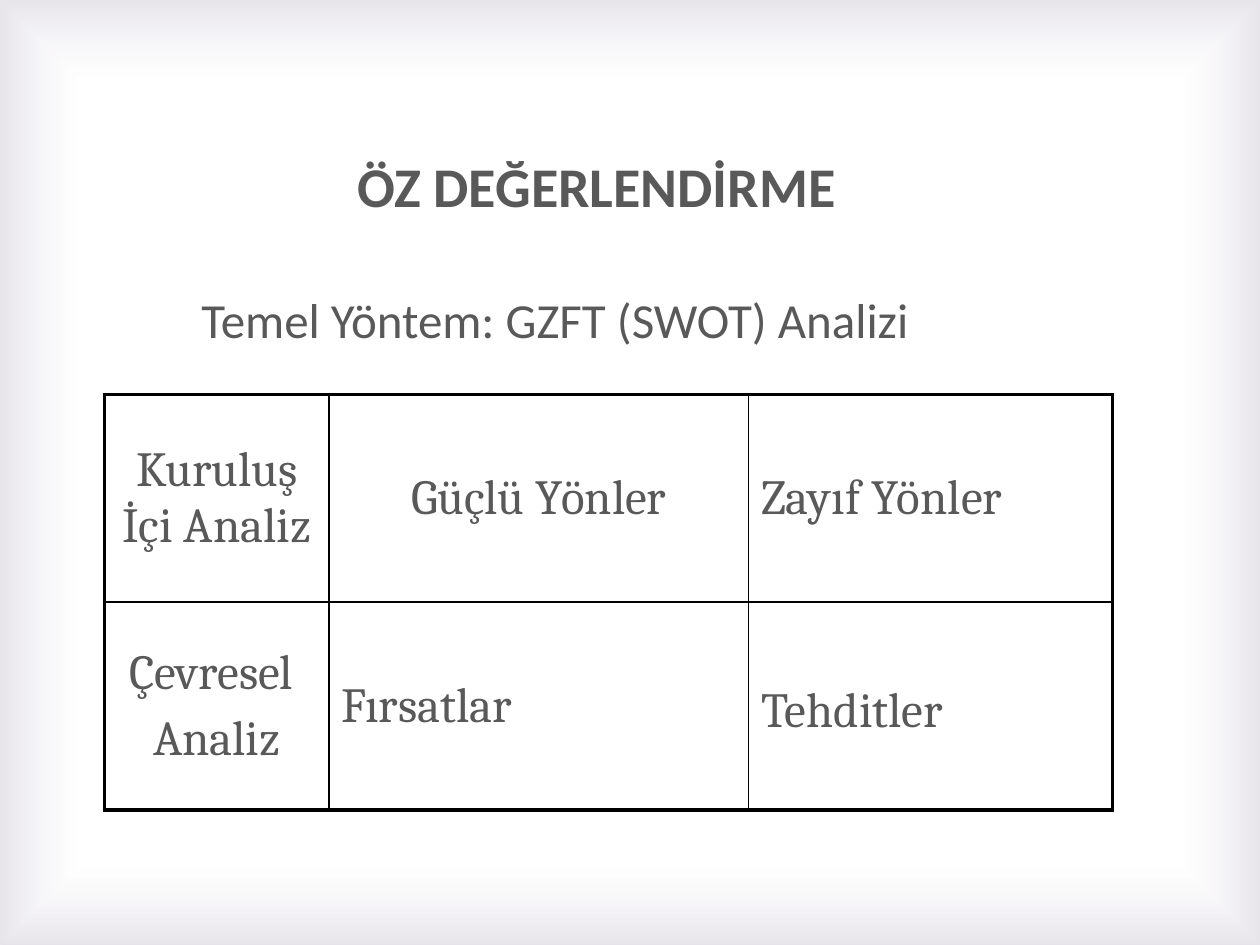
from pptx import Presentation, util as u
from pptx.dml.color import RGBColor
from pptx.enum import shapes, text
from pptx.oxml import parse_xml
from pptx.oxml.ns import nsdecls, qn

# Content
TITLE = "ÖZ DEĞERLENDİRME"
SUBTITLE = "Temel Yöntem: GZFT (SWOT) Analizi"
LEFT, CENTER = text.PP_ALIGN.LEFT, text.PP_ALIGN.CENTER
# Each cell: paragraphs, alignment, top margin in cm
ROWS = [
    [(["Kuruluş İçi Analiz"], CENTER, 0.13),
     (["Güçlü Yönler"], CENTER, 0.13),
     (["Zayıf Yönler"], LEFT, 0.13)],
    [(["Çevresel ", "Analiz"], CENTER, 0.13),
     (["Fırsatlar"], LEFT, 0.13),
     (["Tehditler"], LEFT, 0.33)],
]
COLUMN_WIDTHS = [4.52, 8.46, 7.34]
ROW_HEIGHT = 4.19
OUTER, INNER = 2.25, 1  # border widths in points
GRAY, BLACK = "595959", "000000"
# Frame gradient: position, colour, opacity in percent
STOPS = [(83, "FFFFFF", 11), (100, "9689A6", 23)]


def color(value):
    return RGBColor.from_string(value)


def write(frame, lines, font, size, alignment=LEFT, bold=False, before=0):
    frame.word_wrap = True
    for index, line in enumerate(lines):
        paragraph = frame.add_paragraph() if index else frame.paragraphs[0]
        paragraph.text = line
        paragraph.alignment = alignment
        paragraph.space_before = u.Pt(before)
        paragraph.font.name = font
        paragraph.font.size = u.Pt(size)
        paragraph.font.bold = bold
        paragraph.font.color.rgb = color(GRAY)


def set_borders(cell, widths):
    properties = cell._tc.get_or_add_tcPr()
    for index, (side, width) in enumerate(zip("LRTB", widths)):
        properties.insert(index, parse_xml(
            f'<a:ln{side} {nsdecls("a")} w="{u.Pt(width)}"><a:solidFill>'
            f'<a:srgbClr val="{BLACK}"/></a:solidFill></a:ln{side}>'))


presentation = Presentation()
presentation.slide_width, presentation.slide_height = u.Cm(25.4), u.Cm(19.05)
slide = presentation.slides.add_slide(presentation.slide_layouts[6])

# Soft frame fading towards the middle
frame_shape = slide.shapes.add_shape(
    shapes.MSO_SHAPE.RECTANGLE, 0, 0,
    presentation.slide_width, presentation.slide_height)
frame_shape.shadow.inherit = False
frame_shape.line.fill.background()
frame_shape.fill.background()
stops = "".join(
    f'<a:gs pos="{position * 1000}"><a:srgbClr val="{value}">'
    f'<a:alpha val="{opacity * 1000}"/></a:srgbClr></a:gs>'
    for position, value, opacity in STOPS)
shape_properties = frame_shape._element.spPr
shape_properties.replace(shape_properties.find(qn("a:noFill")), parse_xml(
    f'<a:gradFill {nsdecls("a")} rotWithShape="1"><a:gsLst>{stops}</a:gsLst>'
    '<a:path path="rect"><a:fillToRect l="50000" t="50000" r="50000" b="50000"/>'
    '</a:path></a:gradFill>'))

# Subtitle
subtitle = slide.shapes.add_textbox(u.Cm(3.81), u.Cm(5.72), u.Cm(20.32), u.Cm(1.42))
write(subtitle.text_frame, [SUBTITLE], "Calibri", 28)

# Analysis table
table = slide.shapes.add_table(
    len(ROWS), len(COLUMN_WIDTHS), u.Cm(2.11), u.Cm(7.95),
    u.Cm(sum(COLUMN_WIDTHS)), u.Cm(ROW_HEIGHT * len(ROWS))).table
table.first_row = table.horz_banding = False
for column, width in zip(table.columns, COLUMN_WIDTHS):
    column.width = u.Cm(width)
last_row, last_column = len(ROWS) - 1, len(COLUMN_WIDTHS) - 1
for r, row in enumerate(ROWS):
    table.rows[r].height = u.Cm(ROW_HEIGHT)
    for c, (lines, alignment, top) in enumerate(row):
        cell = table.cell(r, c)
        cell.fill.background()
        cell.vertical_anchor = text.MSO_ANCHOR.MIDDLE
        cell.margin_top = u.Cm(top)
        write(cell.text_frame, lines, "Cambria", 28, alignment, before=5.6)
        at_edge = (c == 0, c == last_column, r == 0, r == last_row)
        set_borders(cell, [OUTER if edge else INNER for edge in at_edge])

# Title, sitting on the lower half of its box
title = slide.shapes.add_textbox(u.Cm(1.27), u.Cm(1.96), u.Cm(20.75), u.Cm(2.16))
title.text_frame.vertical_anchor = text.MSO_ANCHOR.MIDDLE
title.text_frame.margin_top = u.Cm(1.5)
title.text_frame.margin_left = u.Cm(1.02)
write(title.text_frame, [TITLE], "Calibri", 32, CENTER, bold=True)

presentation.save("out.pptx")
